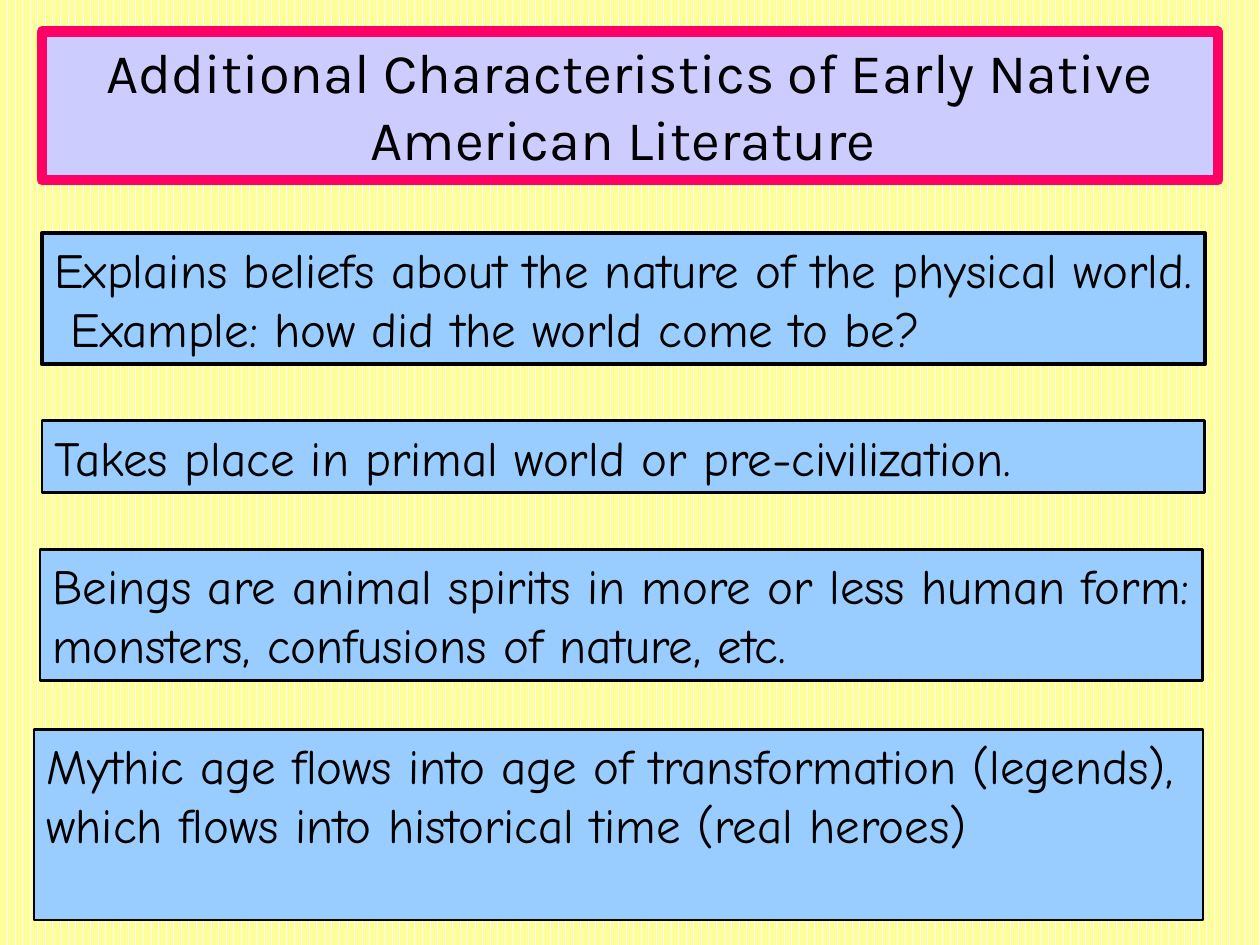
from pptx import Presentation
from pptx.dml.color import RGBColor
from pptx.enum import dml, text
from pptx.util import Pt

BLACK = RGBColor(0x00, 0x00, 0x00)
WHITE = RGBColor(0xFF, 0xFF, 0xFF)
YELLOW = RGBColor(0xFF, 0xFF, 0x99)
LAVENDER = RGBColor(0xCC, 0xCC, 0xFF)
PINK = RGBColor(0xFF, 0x00, 0x66)
BLUE = RGBColor(0x99, 0xCC, 0xFF)

TITLE = "Additional Characteristics of Early Native American Literature "
# Left, top, width, height and border in points, then the wording
CHARACTERISTICS = [
    (24, 133.2, 664.5, 75, 2.25,
     "Explains beliefs about the nature of the physical world.  "
     "Example: how did the world come to be?"),
    (24, 240.5, 664.5, 41, 1.5,
     "Takes place in primal world or pre-civilization."),
    (22.8, 313.9, 664.5, 75, 1.5,
     "Beings are animal spirits in more or less human form: "
     "monsters, confusions of nature, etc."),
    (19.5, 417, 668, 108.7, 1.5,
     "Mythic age flows into age of transformation (legends), "
     "which flows into historical time (real heroes)"),
]


def paint_background(s):
    fill = s.background.fill
    fill.patterned()
    fill.pattern = dml.MSO_PATTERN.DASHED_VERTICAL
    fill.fore_color.rgb = WHITE
    fill.back_color.rgb = YELLOW


def add_panel(s, box, wording, fill, line, border, font, size):
    """Add a filled, bordered text box and return its paragraph."""
    sp = s.shapes.add_textbox(*map(Pt, box))
    sp.fill.solid()
    sp.fill.fore_color.rgb = fill
    sp.line.color.rgb = line
    sp.line.width = Pt(border)
    tf = sp.text_frame
    tf.word_wrap = True
    p = tf.paragraphs[0]
    p.text = wording
    p.font.name = font
    p.font.size = Pt(size)
    p.font.color.rgb = BLACK
    return p


def add_title(s, box):
    p = add_panel(s, box, TITLE, LAVENDER, PINK, 6, "Karla", 32)
    p.alignment = text.PP_ALIGN.CENTER


def add_characteristics(s):
    for *box, border, wording in CHARACTERISTICS:
        add_panel(s, box, wording, BLUE, BLACK, border, "Comic Neue", 28)


def main():
    prs = Presentation()
    prs.slide_width, prs.slide_height = Pt(720), Pt(540)
    s = prs.slides.add_slide(prs.slide_layouts[6])
    paint_background(s)
    add_title(s, (24, 18, 672, 85))
    add_characteristics(s)
    prs.save("out.pptx")


if __name__ == "__main__":
    main()
